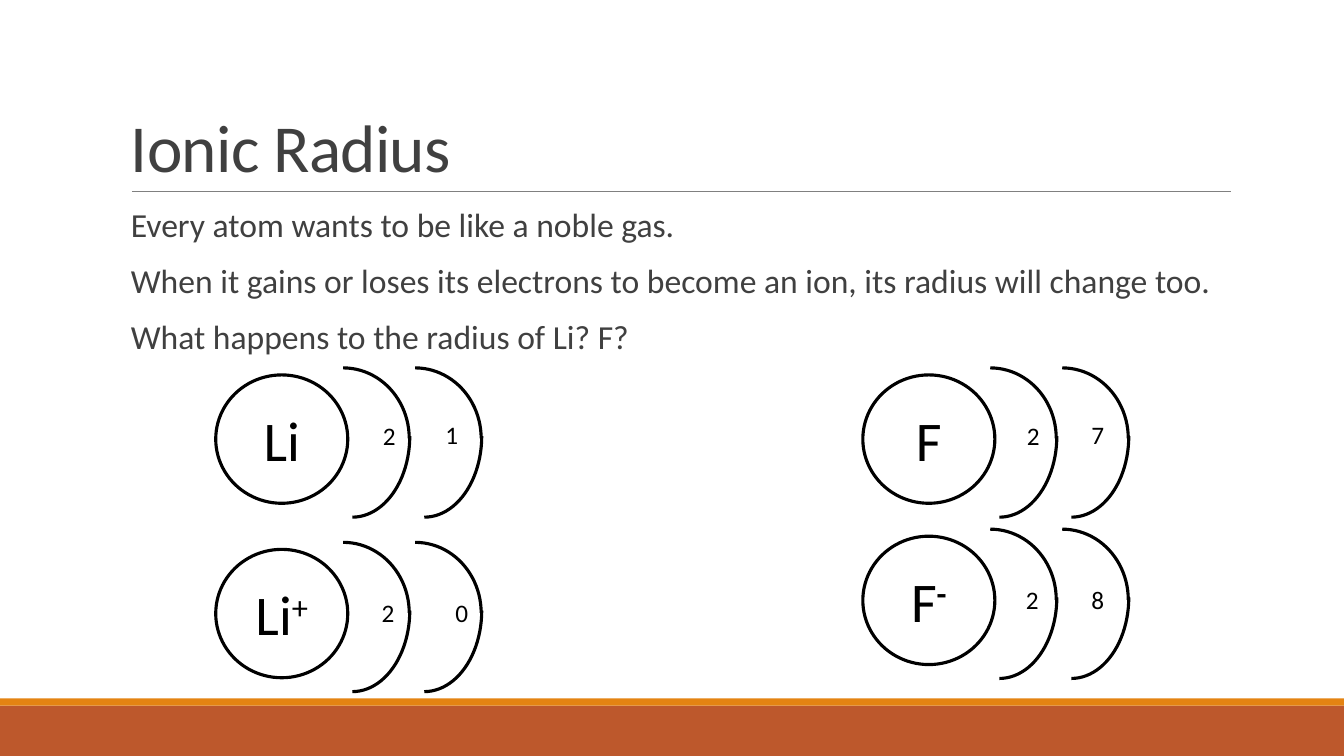
from lxml.etree import SubElement
from pptx import Presentation
from pptx.dml.color import RGBColor
from pptx.enum.shapes import MSO_CONNECTOR as Connector, MSO_SHAPE as Shape
from pptx.enum.text import MSO_ANCHOR as Anchor, PP_ALIGN as Align
from pptx.oxml.ns import qn
from pptx.util import Pt

COLORS = {
    "ink": "000000",
    "paper": "FFFFFF",
    "text": "404040",
    "rule": "808080",
    "band": "BD582C",
    "stripe": "E48312",
}
SHELL_STEP = 51.4

# symbol, charge, charge is bold, nucleus left, nucleus top,
# electrons per shell as (count, x offset, y offset) from the nucleus
ATOMS = [
    ("Li", "", False, 154.1, 267.8, [("2", 110.2, 28.8), ("1", 154.8, 28.1)]),
    ("F", "", False, 616.3, 267.8, [("2", 108, 28.8), ("7", 154.1, 28.1)]),
    ("F", "-", True, 616.3, 383, [("2", 107.3, 31), ("8", 154.1, 31)]),
    ("Li", "+", False, 154.1, 392.4, [("2", 109.4, 31), ("0", 162, 31)]),
]


class SlideBuilder:
    font = "Calibri"
    outline = 2.25

    def __init__(self, slide):
        self.shapes = slide.shapes

    def color(self, name):
        return RGBColor.from_string(COLORS[name])

    def shape(self, preset, box, fill=None, line=None):
        shape = self.shapes.add_shape(preset, *map(Pt, box))
        shape.shadow.inherit = False
        if fill:
            shape.fill.solid()
            shape.fill.fore_color.rgb = self.color(fill)
        else:
            shape.fill.background()
        if line:
            shape.line.color.rgb = self.color(line)
            shape.line.width = Pt(self.outline)
        else:
            shape.line.fill.background()
        return shape

    def rule(self, x1, x2, y):
        line = self.shapes.add_connector(
            Connector.STRAIGHT, Pt(x1), Pt(y), Pt(x2), Pt(y))
        line.line.color.rgb = self.color("rule")
        line.line.width = Pt(0.5)
        SubElement(line._element.spPr, qn("a:effectLst"))

    def run(self, paragraph, text, size, color="ink", bold=None, **attributes):
        """Add a run; extra attributes go onto its run properties."""
        run = paragraph.add_run()
        run.text = text
        run.font.name = self.font
        run.font.size = Pt(size)
        run.font.bold = bold
        run.font.color.rgb = self.color(color)
        for key, value in attributes.items():
            run._r.get_or_add_rPr().set(key, value)

    def text_frame(self, box, anchor=Anchor.TOP):
        frame = self.shapes.add_textbox(*map(Pt, box)).text_frame
        frame.word_wrap = True
        frame.vertical_anchor = anchor
        return frame

    def title(self, text, box):
        paragraph = self.text_frame(box, Anchor.BOTTOM).paragraphs[0]
        paragraph.line_spacing = 0.85
        self.run(paragraph, text, 48, "text", spc="-50")

    def body(self, lines, box):
        frame = self.text_frame(box)
        frame.margin_right = 0
        for index, line in enumerate(lines):
            paragraph = frame.add_paragraph() if index else frame.paragraphs[0]
            paragraph.line_spacing = 0.9
            paragraph.space_before = Pt(12)
            paragraph.space_after = Pt(2)
            self.run(paragraph, line, 24, "text")

    def nucleus(self, symbol, charge, bold_charge, x, y):
        circle = self.shape(Shape.FLOWCHART_CONNECTOR, (x, y, 94.3, 91.7),
                            "paper", "ink")
        circle.text_frame.vertical_anchor = Anchor.MIDDLE
        paragraph = circle.text_frame.paragraphs[0]
        paragraph.alignment = Align.CENTER
        self.run(paragraph, symbol, 40)
        if charge:
            self.run(paragraph, charge, 40, bold=bold_charge or None,
                     baseline="30000")

    def shell(self, x, y):
        """Draw a half-open shell from an upper and a lower quarter arc."""
        self.shape(Shape.ARC, (x + 43.9, y - 5, 94.3, 100.8), line="ink")
        lower = self.shape(Shape.ARC, (x + 39.6, y + 2.6, 115.9, 82.1), line="ink")
        lower.rotation = 90

    def electrons(self, count, x, y):
        paragraph = self.text_frame((x, y, 27.4, 29.1)).paragraphs[0]
        paragraph.alignment = Align.CENTER
        self.run(paragraph, count, 18)

    def atom(self, symbol, charge, bold_charge, x, y, shells):
        self.nucleus(symbol, charge, bold_charge, x, y)
        for index, (count, dx, dy) in enumerate(shells):
            self.shell(x + index * SHELL_STEP, y)
            self.electrons(count, x + dx, y + dy)


def main():
    deck = Presentation()
    deck.slide_width, deck.slide_height = Pt(960), Pt(540)
    builder = SlideBuilder(deck.slides.add_slide(deck.slide_layouts[6]))

    builder.shape(Shape.RECTANGLE, (0, 504, 960, 36), "band")
    builder.shape(Shape.RECTANGLE, (0, 498.8, 960, 5.2), "stripe")
    builder.rule(94.3, 879, 136.8)
    builder.title("Ionic Radius", (86.4, 22.3, 792, 114.5))
    builder.body([
        "Every atom wants to be like a noble gas.",
        "When it gains or loses its electrons to become an ion, "
        "its radius will change too.",
        "What happens to the radius of Li? F?",
    ], (86.4, 145.4, 792, 115.2))
    for atom in ATOMS:
        builder.atom(*atom)

    deck.save("out.pptx")


if __name__ == "__main__":
    main()
